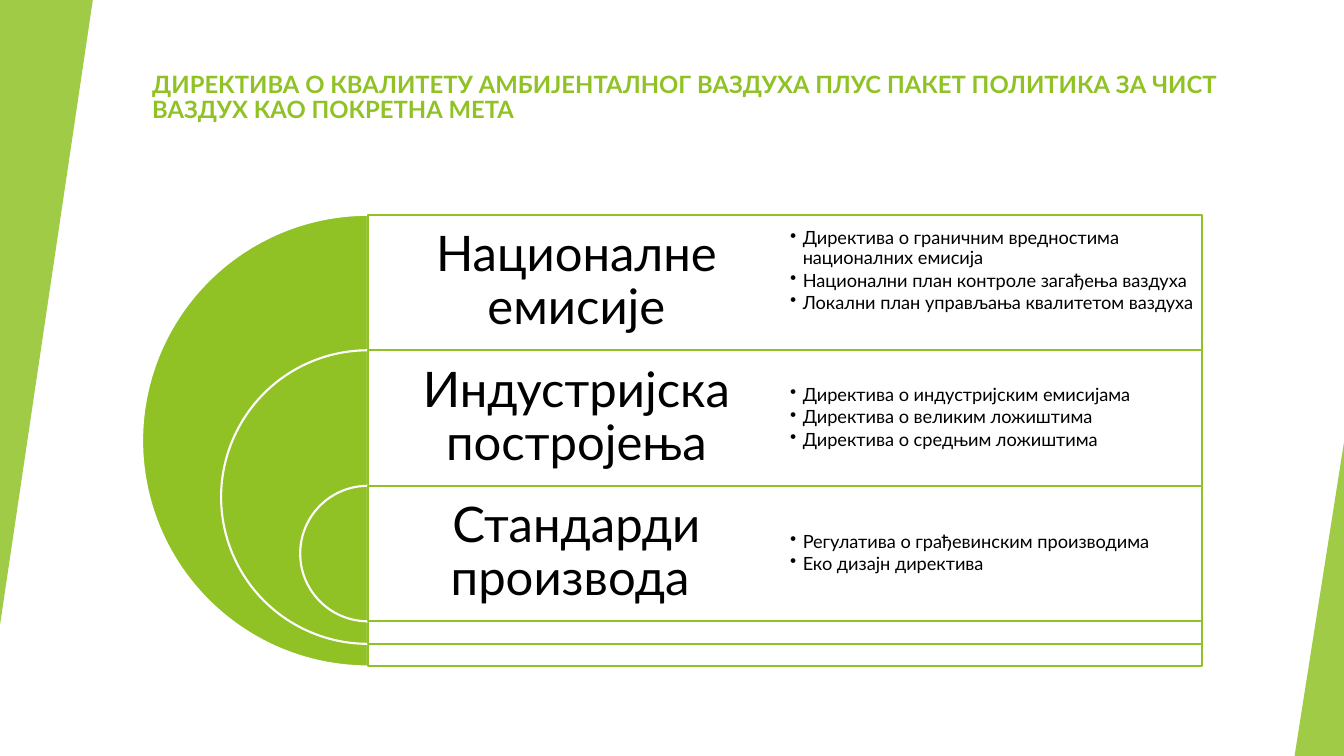
"""Build a slide on the air quality directive and its three nested policy areas."""
from lxml.etree import SubElement
from pptx import Presentation
from pptx.dml.color import RGBColor
from pptx.enum.shapes import MSO_SHAPE
from pptx.enum.text import MSO_ANCHOR, MSO_AUTO_SIZE, PP_ALIGN
from pptx.oxml.ns import qn
from pptx.util import Pt

GREEN, WHITE, BLACK = "90C226", "FFFFFF", "000000"
TITLE = "ДИРЕКТИВА О КВАЛИТЕТУ АМБИЈЕНТАЛНОГ ВАЗДУХА ПЛУС ПАКЕТ ПОЛИТИКА ЗА ЧИСТ ВАЗДУХ КАО ПОКРЕТНА МЕТА"
AREAS = [
    ("Националне емисије", [
        "Директива о граничним вредностима националних емисија",
        "Национални план контроле загађења ваздуха",
        "Локални план управљања квалитетом ваздуха"]),
    ("Индустријска постројења", [
        "Директива о индустријским емисијама",
        "Директива о великим ложиштима",
        "Директива о средњим ложиштима"]),
    ("Стандарди производа ", [
        "Регулатива о грађевинским производима",
        "Еко дизајн директива"]),
]
CENTER_X, PANEL_WIDTH, COLUMN_WIDTH = 262.8, 596, 298
TOP, ROW_HEIGHT, OUTER_DIAMETER, DIAMETER_STEP = 153.4, 96.8, 322.6, 112.9


def add_filled_shape(kind, left, top, width, height, color, opacity=100, line=None):
    shape = slide.shapes.add_shape(kind, Pt(left), Pt(top), Pt(width), Pt(height))
    shape.shadow.inherit = False
    shape.fill.solid()
    shape.fill.fore_color.rgb = RGBColor.from_string(color)
    if opacity < 100:
        color_element = shape.fill._xPr.find(qn("a:solidFill"))[0]
        SubElement(color_element, qn("a:alpha"), val=str(opacity * 1000))
    if line:
        shape.line.color.rgb = RGBColor.from_string(line)
        shape.line.width = Pt(1.5)
    else:
        shape.line.fill.background()
    return shape


def format_text(frame, text, size, color, alignment, anchor, margins, space_after=0, bold=False):
    frame.text = text
    frame.word_wrap = True
    frame.auto_size = MSO_AUTO_SIZE.NONE
    frame.vertical_anchor = anchor
    frame.margin_left, frame.margin_top, frame.margin_right, frame.margin_bottom = map(Pt, margins)
    for paragraph in frame.paragraphs:
        paragraph.alignment = alignment
        paragraph.line_spacing = 0.9
        paragraph.space_before = Pt(0)
        paragraph.space_after = Pt(space_after)
        for run in paragraph.runs:
            run.font.name = "Lato"
            run.font.size = Pt(size)
            run.font.bold = bold
            run.font.color.rgb = RGBColor.from_string(color)


presentation = Presentation()
presentation.slide_width, presentation.slide_height = Pt(960), Pt(540)
slide = presentation.slides.add_slide(presentation.slide_layouts[5])

title = slide.shapes.title
title.left, title.top, title.width, title.height = Pt(101.5), Pt(48.2), Pt(802.8), Pt(86.4)
format_text(title.text_frame, TITLE, 17, GREEN, PP_ALIGN.LEFT, MSO_ANCHOR.TOP,
            (7.2, 3.6, 7.2, 3.6), bold=True)

for left, top, width, height, rotation in [(0, 0, 66.3, 446.4, 180), (924.7, 316, 35.3, 224, 0)]:
    triangle = add_filled_shape(MSO_SHAPE.ISOSCELES_TRIANGLE, left, top, width, height, GREEN, 85)
    triangle.adjustments[0] = 1
    triangle.rotation = rotation

for index, (heading, measures) in enumerate(AREAS):
    top = TOP + index * ROW_HEIGHT
    diameter = OUTER_DIAMETER - index * DIAMETER_STEP
    half_disc = add_filled_shape(MSO_SHAPE.PIE, CENTER_X - diameter / 2, top,
                                 diameter, diameter, GREEN, line=WHITE)
    half_disc.adjustments[0], half_disc.adjustments[1] = 54, 162
    add_filled_shape(MSO_SHAPE.RECTANGLE, CENTER_X, top, PANEL_WIDTH, diameter, WHITE, 90, GREEN)

    heading_box, measures_box = [
        slide.shapes.add_textbox(Pt(CENTER_X + column * COLUMN_WIDTH), Pt(top),
                                 Pt(COLUMN_WIDTH), Pt(ROW_HEIGHT))
        for column in range(2)]
    format_text(heading_box.text_frame, heading, 35, BLACK, PP_ALIGN.CENTER,
                MSO_ANCHOR.MIDDLE, (10.5, 10.5, 10.5, 10.5))
    bottom_margin = 19.6 if index == 0 else 3.6
    format_text(measures_box.text_frame, "\n".join(measures), 13, BLACK, PP_ALIGN.LEFT,
                MSO_ANCHOR.MIDDLE, (3.6, 3.6, 3.6, bottom_margin), space_after=2)
    for paragraph in measures_box.text_frame.paragraphs:
        properties = paragraph._p.get_or_add_pPr()
        properties.set("marL", str(Pt(9)))
        properties.set("indent", str(Pt(-9)))
        SubElement(properties, qn("a:buChar"), char="•")

presentation.save("out.pptx")
